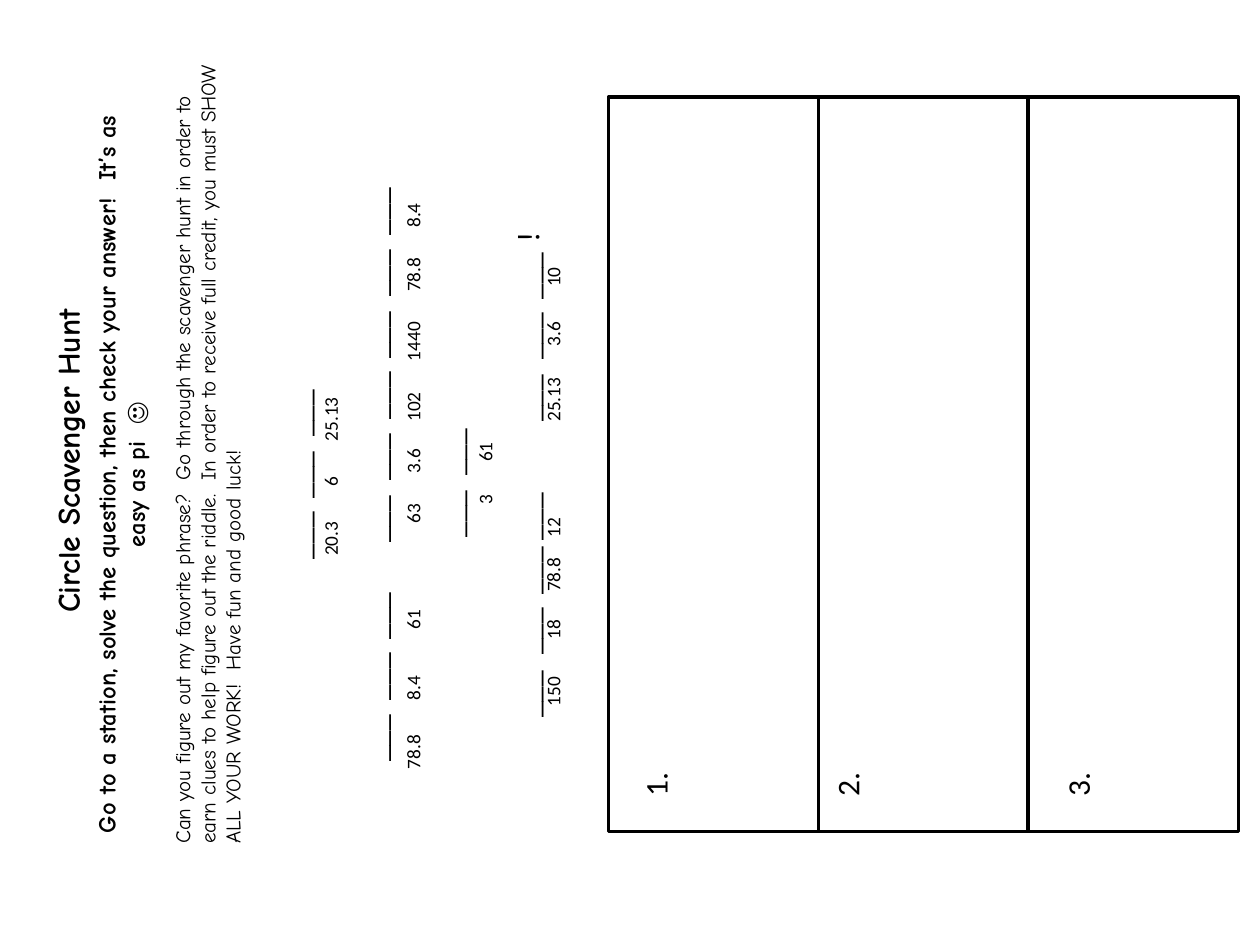
"""Build the Circle Scavenger Hunt worksheet slide, turned on its side."""
from lxml.etree import SubElement
from pptx import Presentation
from pptx.dml.color import RGBColor
from pptx.enum.shapes import MSO_SHAPE as Shape
from pptx.enum.text import MSO_AUTO_SIZE as AutoSize, PP_ALIGN as Align
from pptx.oxml.ns import qn
from pptx.util import Inches, Pt


def color(value):
    return RGBColor.from_string(value)


def add_sideways_text(page, place, lines, font, size, bold=False, align=Align.LEFT):
    box = page.shapes.add_textbox(*[Inches(length) for length in place])
    box.rotation = 270
    frame = box.text_frame
    frame.word_wrap = True
    frame.auto_size = AutoSize.SHAPE_TO_FIT_TEXT
    for index, (text, gap, stops) in enumerate(lines):
        para = frame.paragraphs[0] if index == 0 else frame.add_paragraph()
        para.text = text
        para.alignment = align
        para.space_before = Pt(gap)
        if stops:
            tabs = SubElement(para._p.get_or_add_pPr(), qn("a:tabLst"))
            for stop in stops:
                SubElement(tabs, qn("a:tab"), pos=str(Inches(stop)), algn="l")
        para.font.name = font
        para.font.size = Pt(size)
        para.font.bold = bold
        para.font.color.rgb = color("000000")


deck = Presentation()
deck.slide_width, deck.slide_height = Inches(10), Inches(7.5)
page = deck.slides.add_slide(deck.slide_layouts[6])

intro = (
    "Can you figure out my favorite phrase?  Go through the scavenger hunt in order to "
    "earn clues to help figure out the riddle.  In order to receive full credit, you must "
    "SHOW ALL YOUR WORK!  Have fun and good luck!"
)
motto = "Go to a station, solve the question, then check your answer!  It’s as easy as pi  ☺"
headings = [
    ((-1.63, 3.46, 4.33, 0.4), "Circle Scavenger Hunt", 18, True, Align.CENTER),
    ((-1.58, 3.21, 6.46, 0.71), intro, 12, False, Align.LEFT),
    ((-2.06, 3.48, 6.04, 0.57), motto, 14, True, Align.CENTER),
]
for place, text, size, bold, align in headings:
    add_sideways_text(page, place, [(text, 0, [])], "Comic Neue", size, bold, align)

blank_stops = [
    [1.83, 2.31, 2.8],
    [0.22, 0.71, 1.19, 1.96, 2.45, 2.94, 3.42, 3.91, 4.4],
    [2, 2.49],
    [0.57, 1.07, 1.55, 1.98, 2.92, 3.41, 3.89],
]
blank_lines = [("\t___" * len(stops), 22 if row else 0, stops) for row, stops in enumerate(blank_stops)]
text, gap, stops = blank_lines[-1]
blank_lines[-1] = (text + "\t!", gap, stops + [4.34])
add_sideways_text(page, (0.69, 2.67, 5.17, 2.22), blank_lines, "Calibri", 18)

for index in range(3):
    panel = page.shapes.add_shape(
        Shape.RECTANGLE, Inches(4.83 + 1.665 * index), Inches(0.77), Inches(1.67), Inches(5.83)
    )
    panel.shadow.inherit = False
    panel.fill.solid()
    panel.fill.fore_color.rgb = color("FFFFFF")
    panel.line.color.rgb = color("000000")
    panel.line.width = Pt(2)

question_lines = [("1.", 0, []), ("2.", 88, []), ("3.", 110, [])]
add_sideways_text(page, (4.83, 2.51, 4.08, 3.74), question_lines, "Calibri", 18)

answers = [
    ((0.46, 2.2, 4.33, 0.29), "20.3\t6\t25.13", [0.55, 0.91]),
    (
        (0.74, 3.52, 5.08, 0.29),
        "78.8\t8.4\t61\t63\t3.6\t102\t1440\t78.8\t8.4",
        [0.55, 1.11, 1.95, 2.35, 2.76, 3.24, 3.79, 4.3],
    ),
    ((2.09, 2.81, 3.52, 0.29), "\t3\t61", [0.61, 0.95]),
    (
        (1.79, 2.96, 5.2, 0.29),
        "150\t18\t78.8\t12\t25.13\t3.6\t10",
        [0.53, 0.91, 1.34, 2.26, 2.86, 3.33],
    ),
]
for place, text, stops in answers:
    add_sideways_text(page, place, [(text, 0, stops)], "Calibri", 11)

deck.save("out.pptx")
